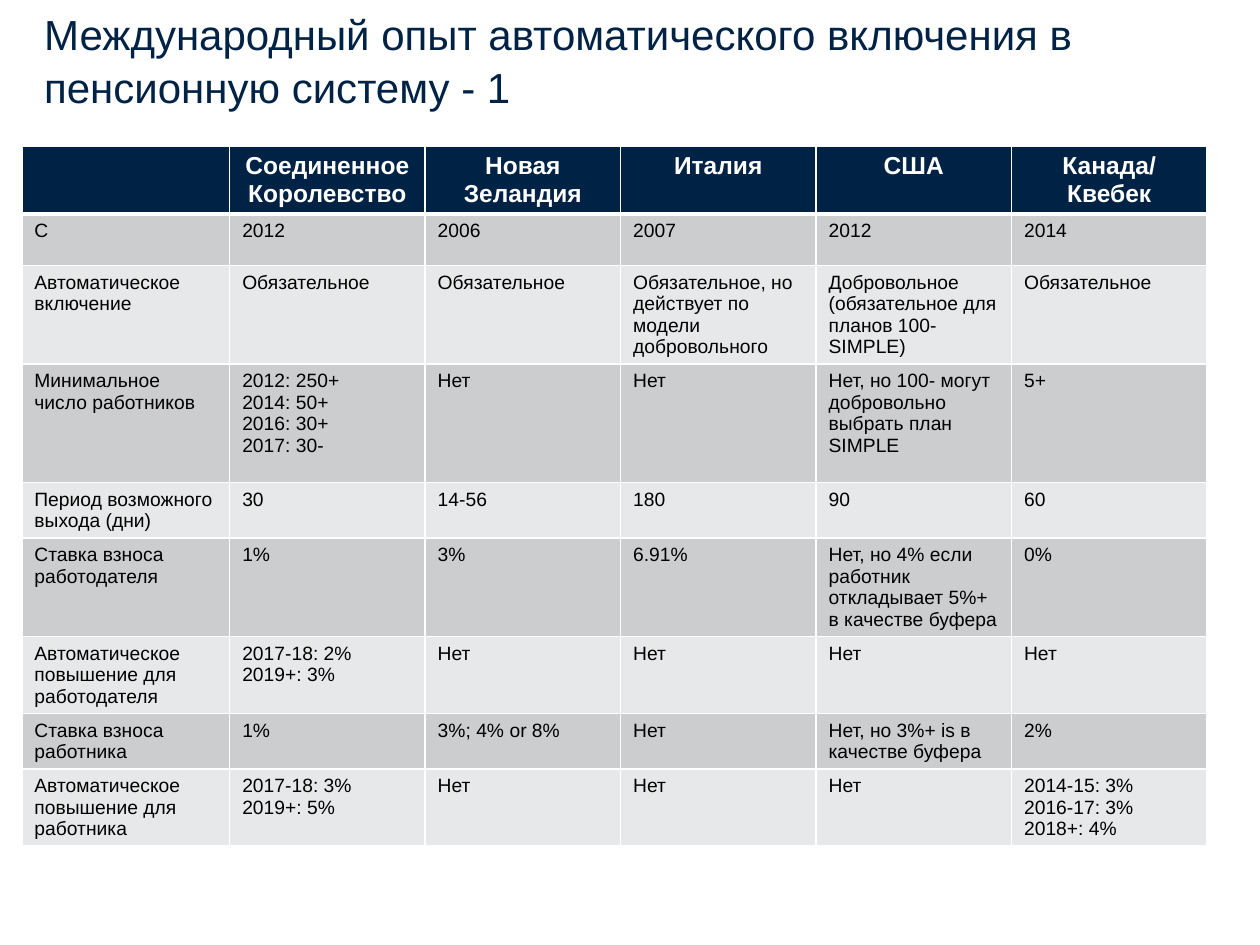
from lxml import etree
from pptx import Presentation
from pptx.dml.color import RGBColor
from pptx.enum.text import MSO_ANCHOR, MSO_AUTO_SIZE, PP_ALIGN
from pptx.oxml.ns import qn
from pptx.util import Cm, Pt

LEFT, CENTER = PP_ALIGN.LEFT, PP_ALIGN.CENTER
BOTTOM, TOP = MSO_ANCHOR.BOTTOM, MSO_ANCHOR.TOP
NO_AUTOFIT = MSO_AUTO_SIZE.NONE

FONT = "Arial"
NAVY, WHITE, BLACK = "002345", "FFFFFF", "000000"
BANDS = ("CCCDCF", "E7E8E9")

TITLE = "Международный опыт автоматического включения в пенсионную систему - 1"
ROWS = [
    ["", "Соединенное Королевство", "Новая Зеландия", "Италия", "США", "Канада/\nКвебек"],
    ["С", "2012", "2006", "2007", "2012", "2014"],
    ["Автоматическое включение", "Обязательное", "Обязательное",
     "Обязательное, но действует по модели добровольного",
     "Добровольное (обязательное для планов 100- SIMPLE)", "Обязательное"],
    ["Минимальное число работников", "2012: 250+\n2014: 50+\n2016: 30+\n2017: 30-",
     "Нет", "Нет", "Нет, но 100- могут добровольно выбрать план SIMPLE", "5+"],
    ["Период возможного выхода (дни)", "30", "14-56", "180", "90", "60"],
    ["Ставка взноса работодателя", "1%", "3%", "6.91%",
     "Нет, но 4% если работник откладывает 5%+ в качестве буфера", "0%"],
    ["Автоматическое повышение для работодателя", "2017-18: 2%\n2019+: 3%",
     "Нет", "Нет", "Нет", "Нет"],
    ["Ставка взноса работника", "1%", "3%; 4% or 8%", "Нет",
     "Нет, но 3%+ is в качестве буфера", "2%"],
    ["Автоматическое повышение для работника", "2017-18: 3%\n2019+: 5%",
     "Нет", "Нет", "Нет", "2014-15: 3%\n2016-17: 3%\n2018+: 4%"],
]
LABEL_WIDTH, COUNTRY_WIDTH = Cm(4.19), Cm(3.94)
ROW_HEIGHT, TALL_ROW_HEIGHT, TALL_ROW = Cm(1.04), Cm(2.39), 3


def rgb(color):
    return RGBColor.from_string(color)


def add_run(p, text, size, color, bold=False):
    r = p.add_run()
    r.text = text
    r.font.name = FONT
    r.font.size = Pt(size)
    r.font.bold = bold
    r.font.color.rgb = rgb(color)


def set_title(s, text):
    title = s.shapes.title
    title.left, title.top = Cm(0.89), Cm(0)
    title.width, title.height = Cm(23.6), Cm(2.31)
    tf = title.text_frame
    tf.auto_size = NO_AUTOFIT
    tf.word_wrap = True
    tf.vertical_anchor = BOTTOM
    tf.margin_left = tf.margin_top = tf.margin_right = 0
    tf.margin_bottom = Cm(0.05)
    p = tf.paragraphs[0]
    p.alignment = LEFT
    p.line_spacing = 1.05
    add_run(p, text, 24, NAVY)


def set_borders(cell, widths):
    """Draw white borders; widths are points for left, right, top, bottom."""
    tc_pr = cell._tc.get_or_add_tcPr()
    for i, (side, width) in enumerate(zip("LRTB", widths)):
        ln = etree.Element(qn(f"a:ln{side}"), w=str(Pt(width)))
        fill = etree.SubElement(ln, qn("a:solidFill"))
        etree.SubElement(fill, qn("a:srgbClr"), val=WHITE)
        tc_pr.insert(i, ln)


def fill_cell(cell, text, row):
    header = row == 0
    cell.fill.solid()
    cell.fill.fore_color.rgb = rgb(NAVY if header else BANDS[(row - 1) % 2])
    cell.vertical_anchor = TOP
    set_borders(cell, (1, 1, 3 if row == 1 else 1, 3 if header else 1))
    tf = cell.text_frame
    for i, line in enumerate(text.split("\n") if text else []):
        p = tf.add_paragraph() if i else tf.paragraphs[0]
        p.alignment = CENTER if header else LEFT
        if header:
            add_run(p, line, 14, WHITE, bold=True)
        else:
            add_run(p, line, 11, BLACK)


def add_country_table(s):
    n_rows, n_cols = len(ROWS), len(ROWS[0])
    width = LABEL_WIDTH + (n_cols - 1) * COUNTRY_WIDTH
    height = (n_rows - 1) * ROW_HEIGHT + TALL_ROW_HEIGHT
    table = s.shapes.add_table(n_rows, n_cols, Cm(0.44), Cm(2.95), width, height).table
    for i, column in enumerate(table.columns):
        column.width = COUNTRY_WIDTH if i else LABEL_WIDTH
    for i, texts in enumerate(ROWS):
        table.rows[i].height = TALL_ROW_HEIGHT if i == TALL_ROW else ROW_HEIGHT
        for j, text in enumerate(texts):
            fill_cell(table.cell(i, j), text, i)


def main():
    prs = Presentation()
    prs.slide_width, prs.slide_height = Cm(25.4), Cm(19.05)
    s = prs.slides.add_slide(prs.slide_layouts[5])
    set_title(s, TITLE)
    add_country_table(s)
    prs.save("out.pptx")


if __name__ == "__main__":
    main()
